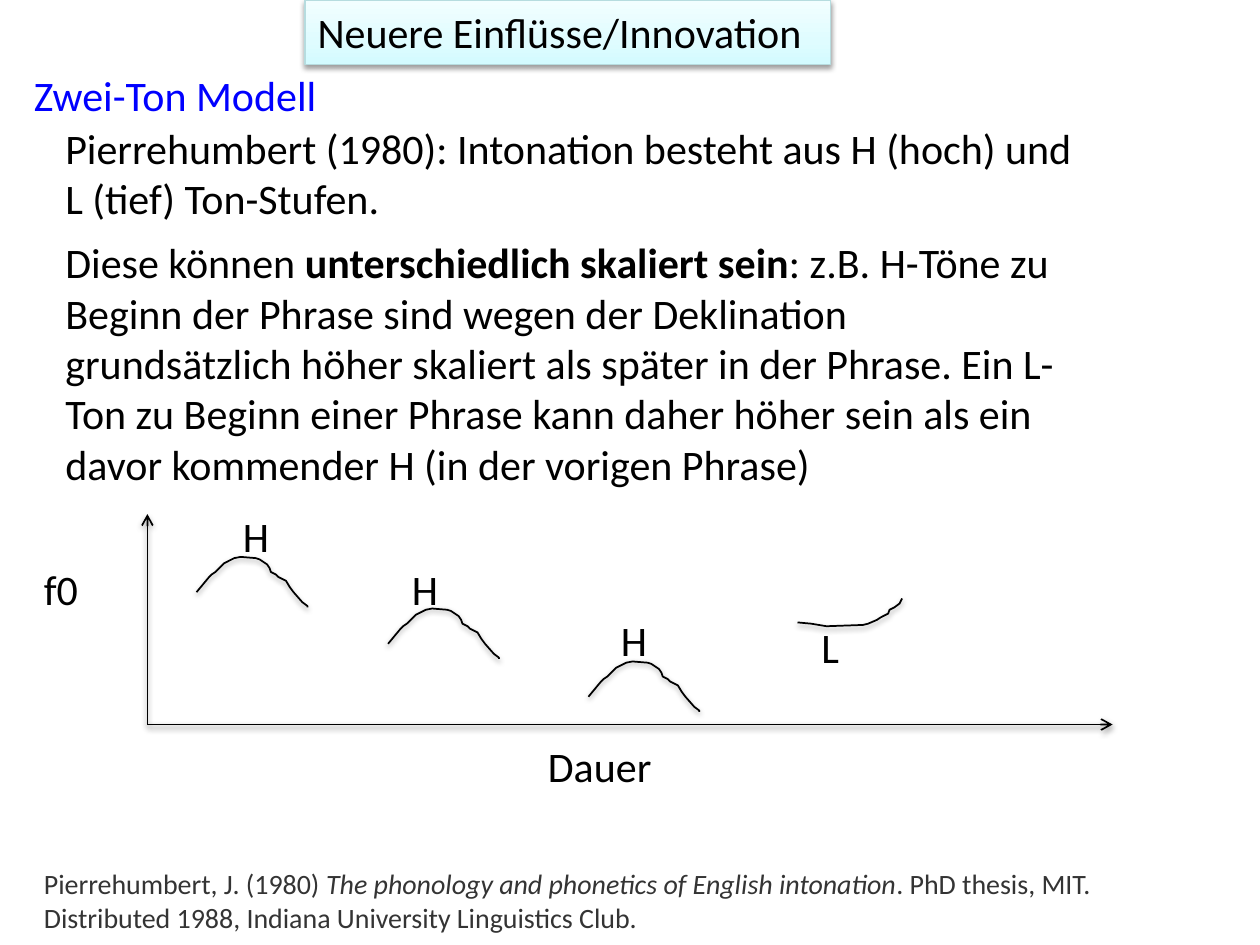
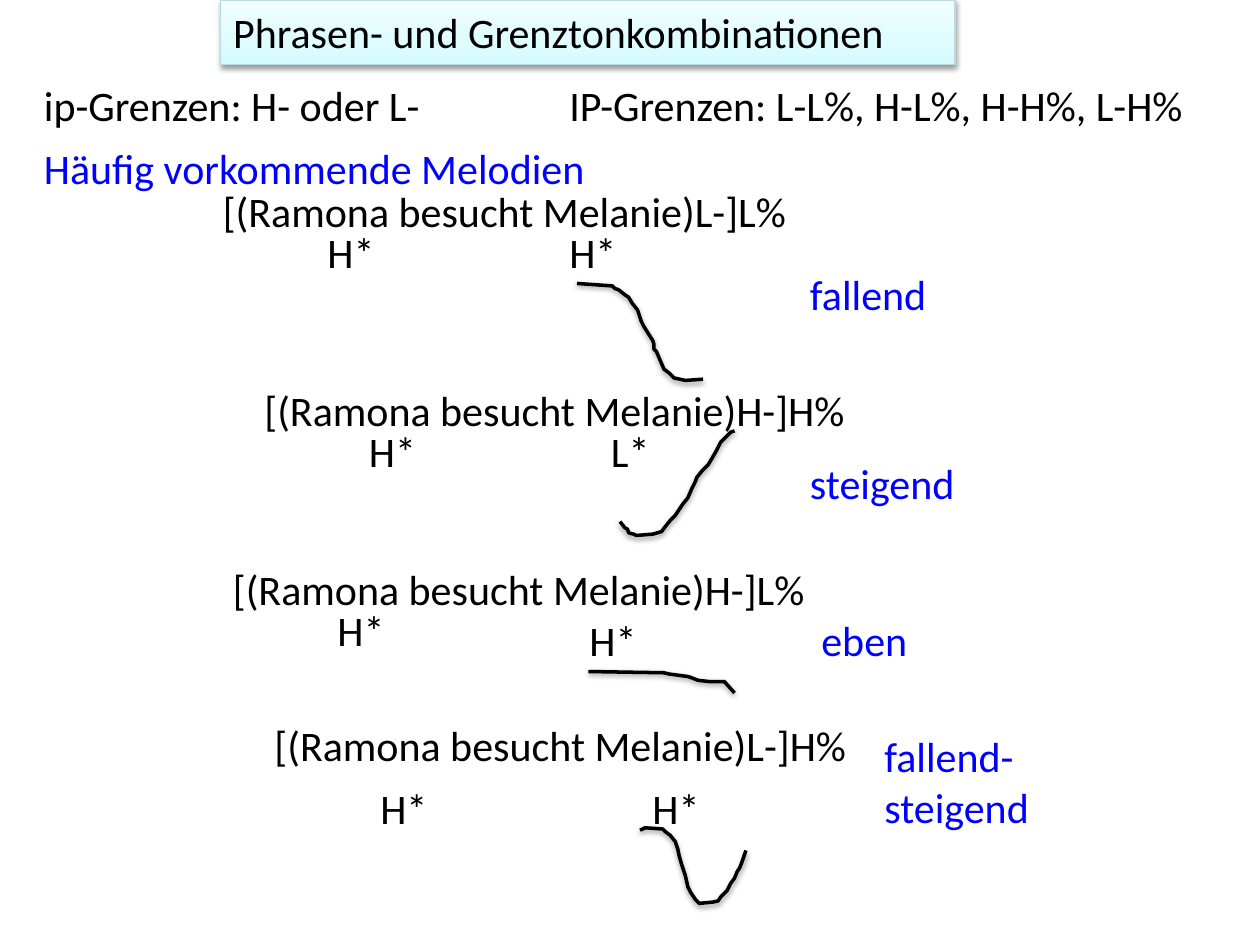
from copy import deepcopy

from lxml import etree
from pptx import Presentation
from pptx.dml.color import RGBColor
from pptx.enum import shapes, text
from pptx.oxml.ns import qn
from pptx.util import Inches, Pt

FONT = "Calibri"
BLACK = RGBColor(0, 0, 0)
BLUE = RGBColor(0, 0, 255)
GREY = RGBColor(0x34, 0x34, 0x34)
BAND_LINE = RGBColor(0xB6, 0xDC, 0xDF)
BAND_STOPS = [
    (0, RGBColor(0xD3, 0xFB, 0xFF)),
    (0.35, RGBColor(0xDF, 0xFC, 0xFF)),
    (1, RGBColor(0xF2, 0xFE, 0xFF)),
]

HAT = [(0, 28), (10, 16), (12, 14), (15, 12), (19, 8), (22, 5), (30, 1),
       (35, 0), (47, 1), (50, 2), (56, 6), (58, 9), (59, 12), (63, 14),
       (65, 16), (71, 19), (74, 24), (77, 28), (84, 36), (88, 39), (88, 40)]
LOW_RISE = [(0, 19), (11, 20), (23, 22), (52, 21), (56, 20), (63, 17),
            (66, 15), (72, 12), (73, 9), (77, 7), (81, 4), (83, 0)]
FALL = [(0, 0), (28, 2), (30, 4), (33, 5), (38, 9), (41, 11), (44, 16),
        (48, 21), (50, 27), (51, 30), (53, 34), (58, 42), (60, 45), (61, 48),
        (61, 52), (63, 54), (66, 61), (69, 68), (73, 71), (77, 75), (86, 77),
        (100, 76)]
RISE = [(0, 72), (4, 77), (6, 78), (7, 81), (11, 82), (13, 83), (26, 82),
        (33, 80), (36, 76), (40, 71), (44, 67), (46, 64), (50, 58), (54, 53),
        (57, 46), (60, 40), (61, 37), (65, 32), (70, 27), (73, 22), (77, 15),
        (80, 9), (84, 5), (88, 1), (91, 0)]
LEVEL = [(0, 0), (60, 1), (64, 2), (79, 4), (82, 5), (87, 7), (96, 8),
         (108, 8), (116, 17)]
FALL_RISE = [(0, 2), (4, 0), (18, 1), (20, 3), (24, 6), (28, 11), (30, 17),
             (31, 22), (33, 29), (36, 38), (38, 47), (40, 51), (42, 54),
             (44, 57), (47, 60), (58, 59), (62, 58), (64, 55), (69, 50),
             (72, 44), (75, 40), (77, 35), (79, 32), (81, 27), (82, 24),
             (84, 18)]

MELODIES = [
    ("[(Ramona besucht Melanie)L-]L%", (1.67, 1.42),
     [("H*", 2.5, 1.75), ("H*", 4.42, 1.75)], FALL, (4.58, 2.25),
     "fallend", (6.33, 2.08, 1.14, 0.51)),
    ("[(Ramona besucht Melanie)H-]H%", (2, 3),
     [("H*", 2.83, 3.33), ("L*", 4.75, 3.33)], RISE, (4.92, 3.42),
     "steigend", (6.33, 3.58, 1.36, 0.51)),
    ("[(Ramona besucht Melanie)H-]L%", (1.75, 4.42),
     [("H*", 2.58, 4.75), ("H*", 4.58, 4.83)], LEVEL, (4.67, 5.33),
     "eben", (6.42, 4.83, 0.89, 0.51)),
    ("[(Ramona besucht Melanie)L-]H%", (2.08, 5.66),
     [("H*", 2.92, 6.16), ("H*", 5.08, 6.16)], FALL_RISE, (5.08, 6.57),
     "fallend-steigend", (6.92, 5.75, 1.75, 0.91)),
]


def write_text(tf, content, size=24, color=BLACK, wrap=True, grow=True):
    sizes = text.MSO_AUTO_SIZE
    tf.word_wrap = wrap
    tf.auto_size = sizes.SHAPE_TO_FIT_TEXT if grow else sizes.NONE
    tf.vertical_anchor = text.MSO_ANCHOR.TOP
    p = tf.paragraphs[0]
    p.alignment = text.PP_ALIGN.LEFT
    runs = [(content, "")] if isinstance(content, str) else content
    for words, style in runs:
        r = p.add_run()
        r.text = words
        r.font.name = FONT
        r.font.size = Pt(size)
        r.font.color.rgb = color
        if style:
            setattr(r.font, style, True)


def add_text(s, at, content, **fmt):
    sp = s.shapes.add_textbox(*map(Inches, at))
    write_text(sp.text_frame, content, **fmt)


def add_shadow(sp):
    spPr = sp._element.spPr
    for old in spPr.findall(qn("a:effectLst")):
        spPr.remove(old)
    effects = etree.SubElement(spPr, qn("a:effectLst"))
    shadow = etree.SubElement(effects, qn("a:outerShdw"), blurRad="40000",
                              dist="20000", dir="5400000", rotWithShape="0")
    color = etree.SubElement(shadow, qn("a:srgbClr"), val="000000")
    etree.SubElement(color, qn("a:alpha"), val="38000")


def set_line(sp, color, width):
    sp.line.color.rgb = color
    sp.line.width = Pt(width)
    add_shadow(sp)


def add_title_slide(prs, title, left, width):
    s = prs.slides.add_slide(prs.slide_layouts[5])
    sp = s.shapes.title
    sp.left, sp.top, sp.width, sp.height = map(Inches, (left, 0, width, 0.51))
    sp.fill.gradient()
    sp.fill.gradient_angle = 90
    stops = sp._element.spPr.find(".//" + qn("a:gsLst"))
    stops.insert(1, deepcopy(stops[0]))
    for stop, (position, color) in zip(sp.fill.gradient_stops, BAND_STOPS):
        stop.position = position
        stop.color.rgb = color
    set_line(sp, BAND_LINE, 0.75)
    write_text(sp.text_frame, title, grow=False)
    return s


def add_axis(s, start, end):
    ends = map(Inches, (*start, *end))
    sp = s.shapes.add_connector(shapes.MSO_CONNECTOR.STRAIGHT, *ends)
    set_line(sp, BLACK, 1)
    etree.SubElement(sp.line._get_or_add_ln(), qn("a:tailEnd"), type="arrow")


def add_contour(s, origin, points, width):
    left, top = (round(v * 100) for v in origin)
    moved = [(left + x, top + y) for x, y in points]
    builder = s.shapes.build_freeform(*moved[0], scale=Inches(0.01))
    builder.add_line_segments(moved[1:], close=False)
    sp = builder.convert_to_shape()
    sp.fill.background()
    set_line(sp, BLACK, width)


def add_melody(s, phrase, phrase_at, tones, contour, contour_at, label, label_at):
    add_text(s, (*phrase_at, 5.75, 0.51), phrase)
    for tone, left, top in tones:
        add_text(s, (left, top, 0.52 if tone == "L*" else 0.58, 0.51), tone,
                 wrap=False)
    add_contour(s, contour_at, contour, 2)
    add_text(s, label_at, label, color=BLUE, wrap="-" in label)


def build_two_tone_model(prs):
    s = add_title_slide(prs, "Neuere Einflüsse/Innovation", 2.42, 4.17)
    add_text(s, (0.17, 0.5, 2.5, 0.5), "Zwei-Ton Modell", color=BLUE)
    add_text(s, (0.42, 0.92, 8.3, 0.91),
             "Pierrehumbert (1980): Intonation besteht aus H (hoch) und "
             "L (tief) Ton-Stufen.")
    add_text(s, (0.42, 1.83, 8.25, 2.12), [
        ("Diese können ", ""),
        ("unterschiedlich skaliert sein", "bold"),
        (": z.B. H-Töne zu Beginn der Phrase sind wegen der Deklination "
         "grundsätzlich höher skaliert als später in der Phrase. Ein L-Ton zu "
         "Beginn einer Phrase kann daher höher sein als ein davor kommender H "
         "(in der vorigen Phrase)", ""),
    ])
    add_text(s, (0.25, 6.83, 8.92, 0.64), [
        ("Pierrehumbert, J. (1980) ", ""),
        ("The phonology and phonetics of English intonation", "italic"),
        (". PhD thesis, MIT. Distributed 1988, Indiana University Linguistics "
         "Club.", ""),
    ], size=16, color=GREY)

    corner = (1.17, 5.75)
    add_axis(s, corner, (1.17, 4.08))
    add_axis(s, corner, (8.83, 5.75))
    for origin in [(1.56, 4.42), (3.08, 4.83), (4.67, 5.25)]:
        add_contour(s, origin, HAT, 1)
    add_contour(s, (6.33, 4.75), LOW_RISE, 1)
    for tone, left, top in [("H", 1.83, 4), ("H", 3.17, 4.42),
                            ("H", 4.83, 4.83), ("L", 6.42, 4.88)]:
        add_text(s, (left, top, 0.58, 0.5), tone)
    add_text(s, (0.25, 4.42, 0.5, 0.5), "f0")
    add_text(s, (4.25, 5.83, 1.42, 0.5), "Dauer")


def build_boundary_tones(prs):
    s = add_title_slide(prs, "Phrasen- und Grenztonkombinationen", 1.75, 5.83)
    add_text(s, (4.42, 0.58, 5.17, 0.5), "IP-Grenzen: L-L%, H-L%, H-H%, L-H%")
    add_text(s, (0.25, 0.58, 3.58, 0.5), "ip-Grenzen: H- oder L-")
    add_text(s, (0.25, 1.08, 7.42, 0.5), "Häufig vorkommende Melodien",
             color=BLUE)
    for melody in MELODIES:
        add_melody(s, *melody)


def main():
    prs = Presentation()
    prs.slide_width = Inches(10)
    prs.slide_height = Inches(7.5)
    build_two_tone_model(prs)
    build_boundary_tones(prs)
    prs.save("out.pptx")


if __name__ == "__main__":
    main()
